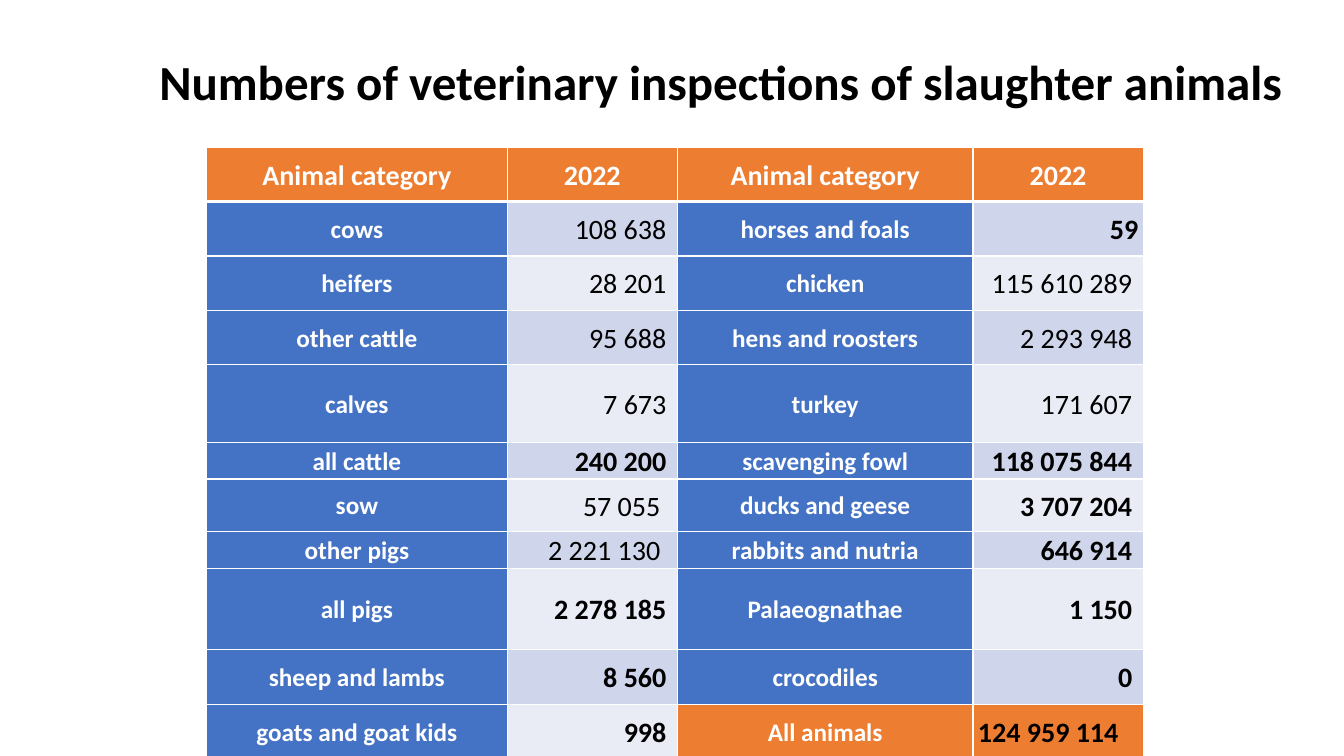
from lxml import etree
from pptx import Presentation
from pptx import util as u
from pptx.dml.color import RGBColor
from pptx.enum import text
from pptx.oxml import ns

HUES = {"head": "ED7D31", "label": "4472C4", "odd": "CFD5EA",
        "even": "E9EBF5", "white": "FFFFFF", "black": "000000"}
COLS = [2.98, 1.69, 2.93, 1.69]
ROWS = [0.54, 0.54, 0.54, 0.54, 0.77, 0.28, 0.52, 0.28, 0.81, 0.54, 0.54]
HEAD = ["Animal category", "2022"] * 2
DATA = [
    ["cows", "108 638", "horses and foals", "59"],
    ["heifers", "28 201", "chicken", "115 610 289"],
    ["other cattle", "95 688", "hens and roosters", "2 293 948"],
    ["calves", "7 673", "turkey", "171 607"],
    ["all cattle", "240 200", "scavenging fowl", "118 075 844"],
    ["sow", "57 055", "ducks and geese", "3 707 204"],
    ["other pigs", "2 221 130", "rabbits and nutria", "646 914"],
    ["all pigs", "2 278 185", "Palaeognathae", "1 150"],
    ["sheep and lambs", "8 560", "crocodiles", "0"],
    ["goats and goat kids", "998", "All animals", "124 959 114"],
]
LIGHT = {"cows", "heifers", "other cattle", "calves", "sow", "other pigs",
         "chicken", "hens and roosters", "turkey"}
PADS = {"sow": 0.17, "other pigs": 0.17, "horses and foals": 0.05}
LEFT, MID, RIGHT = (text.PP_ALIGN.LEFT, text.PP_ALIGN.CENTER,
                    text.PP_ALIGN.RIGHT)


def put(frame, words, size=20, hue="white", bold=True, align=MID, line=1.07):
    para = frame.paragraphs[0]
    para.alignment = align
    para.line_spacing = line
    run = para.add_run()
    run.text = words
    font = run.font
    font.name = "Calibri"
    font.size = u.Pt(size)
    font.bold = bold
    font.color.rgb = RGBColor.from_string(HUES[hue])


class Deck:
    def __init__(self):
        self.show = Presentation()
        self.show.slide_width = u.Inches(13.33)
        self.show.slide_height = u.Inches(7.5)
        self.slide = self.show.slides.add_slide(self.show.slide_layouts[5])

    def title(self, words, *box):
        shape = self.slide.shapes.title
        shape.left, shape.top, shape.width, shape.height = map(u.Inches, box)
        frame = shape.text_frame
        frame.word_wrap = True
        frame.vertical_anchor = text.MSO_ANCHOR.MIDDLE
        put(frame, words, size=35, hue="black", align=LEFT, line=0.9)

    def edge(self, cell, side, width):
        props = cell._tc.get_or_add_tcPr()
        line = etree.SubElement(props, ns.qn("a:ln" + side),
                                w=str(u.Pt(width)))
        fill = etree.SubElement(line, ns.qn("a:solidFill"))
        etree.SubElement(fill, ns.qn("a:srgbClr"), val=HUES["white"])

    def cell(self, cell, words, fill, edges, pad=0.05, **style):
        cell.margin_left, cell.margin_right = u.Inches(0.05), u.Inches(pad)
        cell.margin_top = cell.margin_bottom = 0
        cell.vertical_anchor = text.MSO_ANCHOR.MIDDLE
        for side, width in edges.items():
            self.edge(cell, side, width)
        cell.fill.solid()
        cell.fill.fore_color.rgb = RGBColor.from_string(HUES[fill])
        put(cell.text_frame, words, **style)

    def table(self, left, top):
        grid = self.slide.shapes.add_table(
            len(ROWS), len(COLS), u.Inches(left), u.Inches(top),
            u.Inches(sum(COLS)), u.Inches(sum(ROWS))).table
        for col, width in zip(grid.columns, COLS):
            col.width = u.Inches(width)
        for row, height in zip(grid.rows, ROWS):
            row.height = u.Inches(height)
        for c, words in enumerate(HEAD):
            self.cell(grid.cell(0, c), words, "head",
                      {"L": 1, "R": 1, "T": 1, "B": 3})
        edges = {"L": 1, "R": 1, "B": 1}
        for r, row in enumerate(DATA, 1):
            band = "odd" if r % 2 else "even"
            for c in (0, 2):
                name, value = row[c:c + 2]
                total = name == "All animals"
                self.cell(grid.cell(r, c), name, "head" if total else "label",
                          edges, size=18)
                self.cell(grid.cell(r, c + 1), value,
                          "head" if total else band, edges,
                          pad=0.05 if total else PADS.get(name, 0.11),
                          hue="black", bold=name not in LIGHT,
                          align=LEFT if total else RIGHT)


def main():
    deck = Deck()
    deck.title("Numbers of veterinary inspections of slaughter animals",
               1.48, 0.11, 12.01, 1.45)
    deck.table(2.05, 1.46)
    deck.show.save("out.pptx")


if __name__ == "__main__":
    main()
